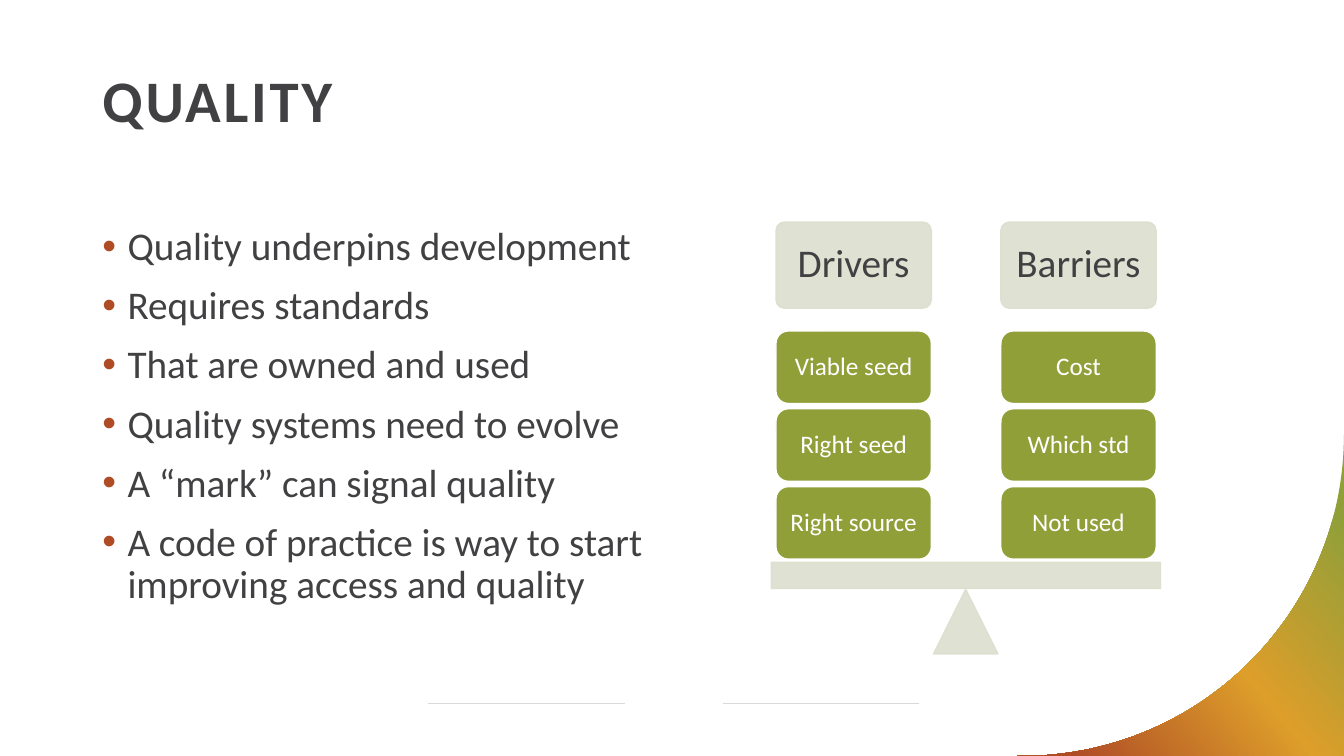
from math import cos, pi, sin

from lxml import etree
from pptx import Presentation
from pptx.dml.color import RGBColor
from pptx.enum.shapes import MSO_CONNECTOR, MSO_SHAPE
from pptx.enum.text import MSO_ANCHOR, MSO_AUTO_SIZE, PP_ALIGN
from pptx.oxml.ns import qn
from pptx.util import Pt

ROUNDED = MSO_SHAPE.ROUNDED_RECTANGLE
RECTANGLE = MSO_SHAPE.RECTANGLE
TRIANGLE = MSO_SHAPE.ISOSCELES_TRIANGLE
STRAIGHT = MSO_CONNECTOR.STRAIGHT
TOP, MIDDLE = MSO_ANCHOR.TOP, MSO_ANCHOR.MIDDLE
LEFT, CENTER = PP_ALIGN.LEFT, PP_ALIGN.CENTER
NO_AUTOFIT = MSO_AUTO_SIZE.NONE

FONT = "Calibri"
INK, WHITE, RULE = "414042", "FFFFFF", "D9D8DA"
GREEN, AMBER, RUST, PALE = "919F39", "DD9E2A", "AF4C26", "DCDFCE"

BULLETS = [
    "Quality underpins development",
    "Requires standards",
    "That are owned and used",
    "Quality systems need to evolve",
    "A “mark” can signal quality",
    "A code of practice is way to start improving access and quality",
]
SCALES = {
    "Drivers": ["Viable seed", "Right seed", "Right source"],
    "Barriers": ["Cost", "Which std", "Not used"],
}


def color(value):
    return RGBColor.from_string(value)


class SlideBuilder:
    """Holds the slide and draws each kind of element in its style."""

    def __init__(self, slide):
        self.slide = slide

    def place(self, shape, left, top, width, height):
        shape.left, shape.top = Pt(left), Pt(top)
        shape.width, shape.height = Pt(width), Pt(height)

    def style(self, paragraph, size, ink, align=LEFT, bold=False):
        paragraph.alignment = align
        paragraph.line_spacing = 0.9
        paragraph.font.name = FONT
        paragraph.font.size = Pt(size)
        paragraph.font.bold = bold
        paragraph.font.color.rgb = color(ink)

    def title(self, text, *box):
        shape = self.slide.shapes.title
        self.place(shape, *box)
        frame = shape.text_frame
        frame.text = text
        frame.auto_size = NO_AUTOFIT
        frame.vertical_anchor = TOP
        paragraph = frame.paragraphs[0]
        self.style(paragraph, 42, INK, bold=True)
        paragraph.runs[0]._r.get_or_add_rPr().set("spc", "200")

    def bullets(self, lines, *box):
        frame = self.slide.shapes.add_textbox(*map(Pt, box)).text_frame
        frame.word_wrap = True
        frame.text = "\n".join(lines)
        for paragraph in frame.paragraphs:
            properties = paragraph._p.get_or_add_pPr()
            properties.set("marL", str(Pt(18)))
            properties.set("indent", str(-Pt(18)))
            bullet_color = etree.SubElement(properties, qn("a:buClr"))
            etree.SubElement(bullet_color, qn("a:srgbClr"), val=RUST)
            etree.SubElement(properties, qn("a:buFont"), typeface="Arial")
            etree.SubElement(properties, qn("a:buChar"), char="•")
            self.style(paragraph, 28, INK)
            paragraph.space_after = Pt(12)

    def block(self, kind, box, fill, line, corner=None, text="", size=18, ink=WHITE):
        shape = self.slide.shapes.add_shape(kind, *map(Pt, box))
        shape.shadow.inherit = False
        if corner is not None:
            shape.adjustments[0] = corner
        shape.fill.solid()
        shape.fill.fore_color.rgb = color(fill)
        shape.line.color.rgb = color(line)
        shape.line.width = Pt(1)
        if fill == PALE:
            for tint in shape._element.spPr.iter(qn("a:srgbClr")):
                etree.SubElement(tint, qn("a:alpha"), val="90000")
        if text:
            frame = shape.text_frame
            frame.word_wrap = True
            frame.vertical_anchor = MIDDLE
            frame.margin_left = frame.margin_right = Pt(5)
            frame.margin_top = frame.margin_bottom = Pt(5)
            frame.text = text
            self.style(frame.paragraphs[0], size, ink, CENTER)

    def rule(self, left, top, width):
        connector = self.slide.shapes.add_connector(
            STRAIGHT, Pt(left), Pt(top), Pt(left + width), Pt(top))
        connector.line.color.rgb = color(RULE)
        connector.line.width = Pt(0.5)
        etree.SubElement(connector._element.spPr, qn("a:effectLst"))

    def corner(self, right, bottom, radius, stops, angle):
        steps = 60
        center_x, center_y = right - radius, bottom - radius
        arc = [(Pt(center_x + radius * cos(step * pi / 2 / steps)),
                Pt(center_y + radius * sin(step * pi / 2 / steps)))
               for step in range(steps + 1)]
        builder = self.slide.shapes.build_freeform(Pt(right), Pt(bottom))
        builder.add_line_segments(arc + [(Pt(center_x - 4), Pt(bottom))])
        shape = builder.convert_to_shape()
        shape.shadow.inherit = False
        shape.line.fill.background()
        shape.fill.gradient()
        gradient = shape._element.spPr.find(qn("a:gradFill"))
        stop_list = gradient.find(qn("a:gsLst"))
        for stop in list(stop_list):
            stop_list.remove(stop)
        for percent, value in stops:
            stop = etree.SubElement(stop_list, qn("a:gs"), pos=str(percent * 1000))
            etree.SubElement(stop, qn("a:srgbClr"), val=value)
        gradient.find(qn("a:lin")).set("ang", str(angle * 60000))


def main():
    presentation = Presentation()
    presentation.slide_width, presentation.slide_height = Pt(960), Pt(540)
    slide = presentation.slides.add_slide(presentation.slide_layouts[5])
    builder = SlideBuilder(slide)

    for left in (306, 516.3):
        builder.rule(left, 502.5, 140.3)
    builder.corner(960, 540, 229.5, [(12, GREEN), (50, AMBER), (91, RUST)], 140)
    builder.title("QUALITY", 66, 47.5, 828, 95)
    builder.bullets(BULLETS, 66, 158.4, 420, 309)

    builder.block(TRIANGLE, (666.8, 421, 46, 46), PALE, PALE)
    builder.block(RECTANGLE, (551, 401.6, 278, 18.8), PALE, PALE)
    for column, (heading, weights) in enumerate(SCALES.items()):
        left = 554.3 + 160.6 * column
        builder.block(ROUNDED, (left, 158.6, 111, 61.6), PALE, PALE, 0.1, heading, 28, INK)
        for row, weight in enumerate(weights):
            box = (left, 236.4 + 55.6 * row, 111, 51.8)
            builder.block(ROUNDED, box, GREEN, WHITE, 0.17, weight)

    presentation.save("out.pptx")


if __name__ == "__main__":
    main()
